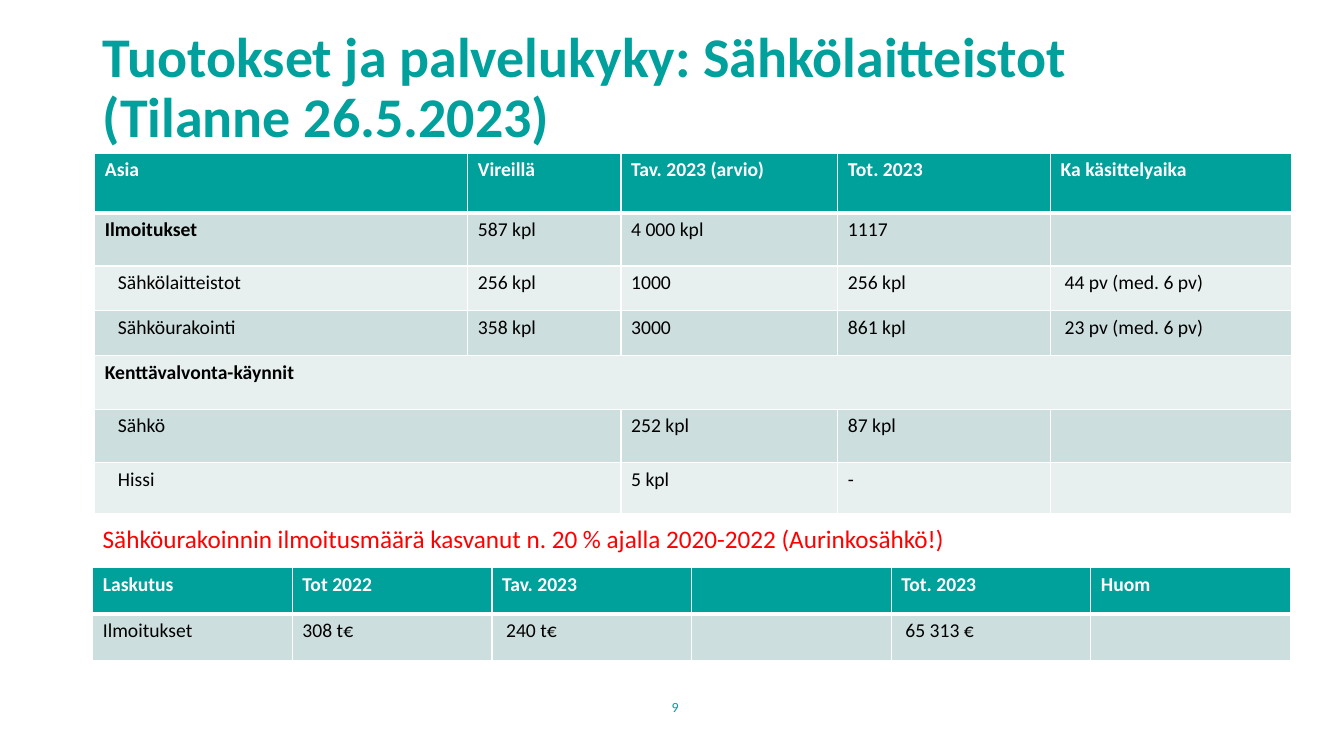
from dataclasses import dataclass
from pptx import Presentation
from pptx.dml.color import RGBColor as Color
from pptx.enum.text import MSO_ANCHOR as Anchor, PP_ALIGN as Align
from pptx.oxml.ns import qn
from pptx.util import Pt
from lxml.etree import SubElement

EMU_PER_PX = 9144


@dataclass(frozen=True)
class Theme:
    font: str = "Calibri"
    teal: str = "00A09C"
    header: str = "00A09B"
    bands: tuple = ("CCDFDE", "E7F0EF")
    white: str = "FFFFFF"
    black: str = "000000"
    red: str = "FF0000"
    title_size: int = 40
    note_size: int = 18
    table_size: int = 14
    number_size: int = 10
    thin: int = 1
    thick: int = 3


@dataclass(frozen=True)
class Entry:
    text: str = ""
    bold: bool = False
    indent: int = 10


THEME = Theme()


def px(length):
    return round(length * EMU_PER_PX)


def write(frame, text, size, color, bold=False, align=Align.LEFT, spacing=None):
    para = frame.paragraphs[0]
    para.text = text
    para.alignment = align
    para.line_spacing = spacing
    for span in para.runs:
        span.font.name = THEME.font
        span.font.size = Pt(size)
        span.font.bold = bold
        span.font.color.rgb = Color.from_string(color)


def add_text(page, area, text, anchor=Anchor.TOP, **style):
    box = page.shapes.add_textbox(*map(px, area))
    frame = box.text_frame
    frame.word_wrap = True
    frame.vertical_anchor = anchor
    write(frame, text, **style)


def set_borders(cell, top, bottom):
    properties = cell._tc.get_or_add_tcPr()
    widths = {"lnL": THEME.thin, "lnR": THEME.thin, "lnT": top, "lnB": bottom}
    for side, width in widths.items():
        line = SubElement(properties, qn(f"a:{side}"), w=str(Pt(width)))
        fill = SubElement(line, qn("a:solidFill"))
        SubElement(fill, qn("a:srgbClr"), val=THEME.white)


def fill_cell(cell, row, entry):
    is_header = row == 0
    set_borders(cell, THEME.thick if row == 1 else THEME.thin,
                THEME.thick if is_header else THEME.thin)
    cell.fill.solid()
    background = THEME.header if is_header else THEME.bands[(row - 1) % 2]
    cell.fill.fore_color.rgb = Color.from_string(background)
    if entry.text:
        cell.margin_left = px(entry.indent)
        write(cell.text_frame, entry.text, size=THEME.table_size,
              color=THEME.white if is_header else THEME.black,
              bold=is_header or entry.bold)


def add_grid(page, left, top, widths, heights, rows):
    """Draw a banded table; None joins a cell to the one on its left."""
    grid = page.shapes.add_table(
        len(heights), len(widths), px(left), px(top),
        px(sum(widths)), px(sum(heights))).table
    grid.first_row = grid.horz_banding = False
    for column, width in zip(grid.columns, widths):
        column.width = px(width)
    for line, height in zip(grid.rows, heights):
        line.height = px(height)
    for row, entries in enumerate(rows):
        start = 0
        for column, entry in enumerate(entries):
            if entry is not None:
                start = column
            value = Entry(entry or "") if not isinstance(entry, Entry) else entry
            fill_cell(grid.cell(row, column), row, value)
            last = column + 1 == len(entries) or entries[column + 1] is not None
            if last and column > start:
                grid.cell(row, start).merge(grid.cell(row, column))


def sub(text):
    return Entry(text, indent=23)


def shifted(text):
    return Entry(text, indent=14)


def section(text):
    return Entry(text, bold=True)


def main():
    deck = Presentation()
    deck.slide_width, deck.slide_height = px(1333), px(750)
    page = deck.slides.add_slide(deck.slide_layouts[6])

    add_text(page, (92, 32, 1187, 113),
             "Tuotokset ja palvelukyky: Sähkölaitteistot\n(Tilanne 26.5.2023)",
             anchor=Anchor.MIDDLE, size=THEME.title_size, color=THEME.teal,
             bold=True, spacing=0.9)
    add_grid(page, 94, 152, [370, 152, 215, 211, 239],
             [59, 53, 44, 45, 53, 53, 51], [
        ["Asia", "Vireillä", "Tav. 2023 (arvio)", "Tot. 2023", "Ka käsittelyaika"],
        [section("Ilmoitukset"), "587 kpl", "4 000 kpl", "1117", ""],
        [sub("Sähkölaitteistot"), "256 kpl", "1000", "256 kpl",
         shifted("44 pv (med. 6 pv)")],
        [sub("Sähköurakointi"), "358 kpl", "3000", "861 kpl",
         shifted("23 pv (med. 6 pv)")],
        [section("Kenttävalvonta-käynnit"), None, None, None, None],
        [sub("Sähkö"), None, "252 kpl", "87 kpl", ""],
        [sub("Hissi"), None, "5 kpl", "-", ""],
    ])
    add_text(page, (617, 681, 105, 34), "9", anchor=Anchor.BOTTOM,
             size=THEME.number_size, color=THEME.teal, align=Align.CENTER)
    add_grid(page, 92, 563, [198] * 6, [46] * 2, [
        ["Laskutus", "Tot 2022", "Tav. 2023", "", "Tot. 2023", "Huom"],
        ["Ilmoitukset", "308 t€", shifted("240 t€"), "",
         shifted("65 313 €"), ""],
    ])
    add_text(page, (92, 514, 970, 40),
             "Sähköurakoinnin ilmoitusmäärä kasvanut n. 20 % ajalla 2020-2022 (Aurinkosähkö!)",
             size=THEME.note_size, color=THEME.red)
    deck.save("out.pptx")


if __name__ == "__main__":
    main()
